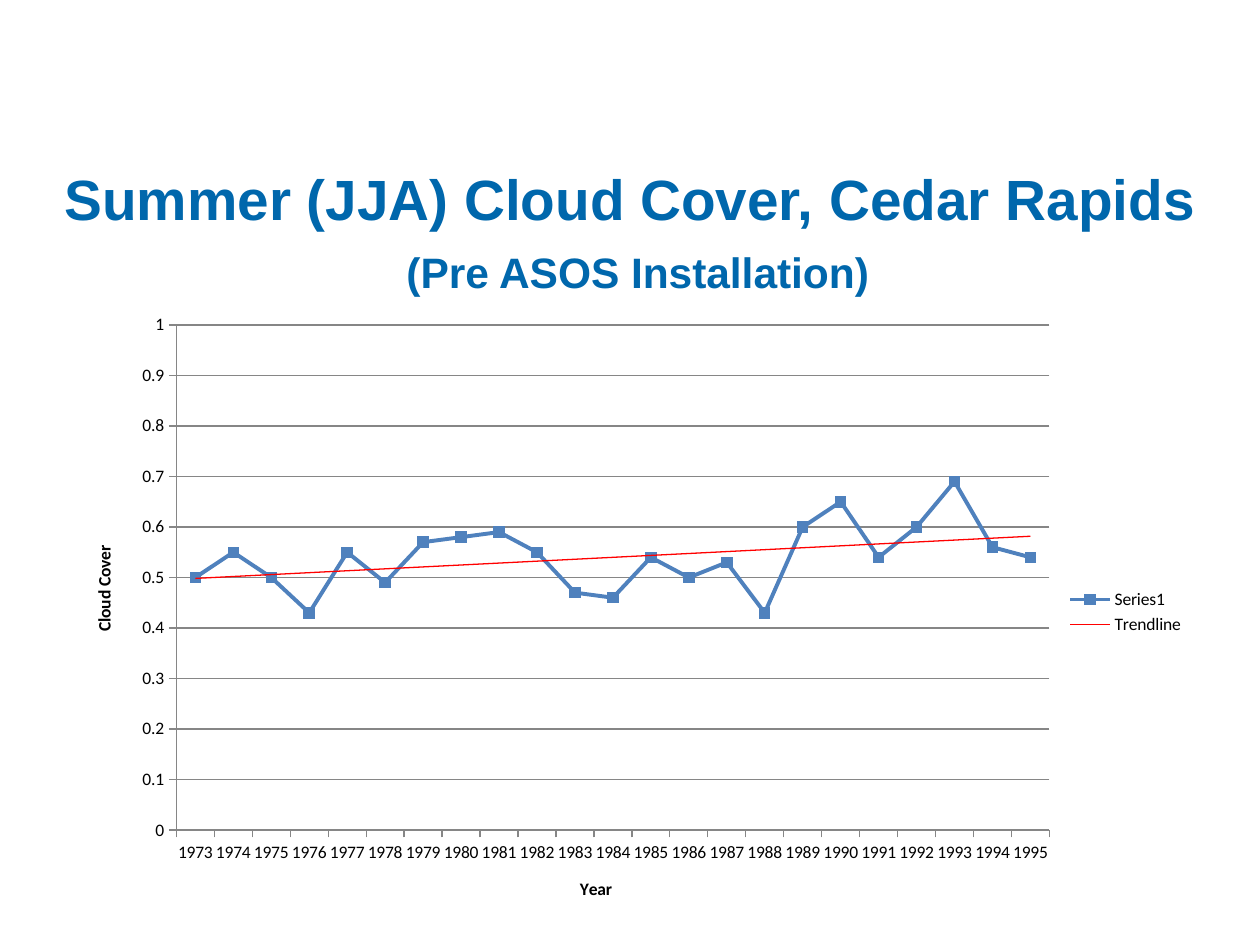
from dataclasses import dataclass
from typing import Any

import pptx
import pptx.chart.data
import pptx.dml.color
import pptx.enum.chart
import pptx.enum.text
import pptx.oxml
import pptx.oxml.ns
import pptx.util

Cm = pptx.util.Cm
Pt = pptx.util.Pt
RGBColor = pptx.dml.color.RGBColor

BLUE = RGBColor(0x00, 0x67, 0xAC)
STEEL = RGBColor(0x4F, 0x81, 0xBD)
GREY = RGBColor(0x86, 0x86, 0x86)
RED = RGBColor(0xFF, 0x00, 0x00)
BLACK = RGBColor(0x00, 0x00, 0x00)

YEARS = range(1973, 1996)
COVER = [0.5, 0.55, 0.5, 0.43, 0.55, 0.49, 0.57, 0.58, 0.59, 0.55, 0.47, 0.46,
         0.54, 0.5, 0.53, 0.43, 0.6, 0.65, 0.54, 0.6, 0.69, 0.56, 0.54]


@dataclass
class Axis:
    scale: Any
    title: str


def write(para: Any, text: str, *, size: float, font: str = "Arial",
          color: RGBColor = BLUE, bold: bool = True) -> None:
    run = para.add_run()
    run.text = text
    run.font.size = Pt(size)
    run.font.name = font
    run.font.bold = bold
    run.font.color.rgb = color


def stroke(line: Any, color: RGBColor, width: float) -> None:
    line.color.rgb = color
    line.width = Pt(width)


def draw_axis(axis: Axis) -> None:
    scale = axis.scale
    scale.major_tick_mark = pptx.enum.chart.XL_TICK_MARK.OUTSIDE
    scale.minor_tick_mark = pptx.enum.chart.XL_TICK_MARK.NONE
    stroke(scale.format.line, GREY, 0.75)
    para = scale.axis_title.text_frame.paragraphs[0]
    write(para, axis.title, size=10, font="Calibri", color=BLACK)


def add_trend(series: Any) -> None:
    ns = pptx.oxml.ns.nsdecls("c", "a")
    trend = pptx.oxml.parse_xml(
        f'<c:trendline {ns}><c:name>Trendline</c:name><c:spPr><a:ln w="{Pt(0.75)}">'
        f'<a:solidFill><a:srgbClr val="{RED}"/></a:solidFill></a:ln></c:spPr>'
        '<c:trendlineType val="linear"/><c:dispRSqr val="0"/>'
        '<c:dispEq val="0"/></c:trendline>')
    series._element.find(pptx.oxml.ns.qn("c:cat")).addprevious(trend)


def place_plot(chart: Any, **frame: float) -> None:
    area = chart._chartSpace.chart.plotArea
    for old in area.findall(pptx.oxml.ns.qn("c:layout")):
        area.remove(old)
    modes = '<c:xMode val="edge"/><c:yMode val="edge"/>'
    sides = "".join(f'<c:{key} val="{val}"/>' for key, val in frame.items())
    area.insert(0, pptx.oxml.parse_xml(
        f'<c:layout {pptx.oxml.ns.nsdecls("c")}><c:manualLayout>'
        f'<c:layoutTarget val="inner"/>{modes}{sides}</c:manualLayout></c:layout>'))


def draw_title(slide: Any) -> None:
    frame = slide.shapes.add_textbox(Cm(0), Cm(3.58), Cm(25.4), Cm(2.6)).text_frame
    frame.word_wrap = True
    frame.vertical_anchor = pptx.enum.text.MSO_ANCHOR.BOTTOM
    para = frame.paragraphs[0]
    para.alignment = pptx.enum.text.PP_ALIGN.CENTER
    write(para, "Summer (JJA) Cloud Cover, Cedar Rapids", size=32.4)
    para.add_line_break()
    write(para, " ", size=32.4)
    write(para, "(Pre ASOS Installation)", size=24.3)


def draw_chart(slide: Any) -> None:
    data = pptx.chart.data.CategoryChartData()
    data.categories = YEARS
    data.add_series("Series1", COVER)
    chart = slide.shapes.add_chart(
        pptx.enum.chart.XL_CHART_TYPE.LINE_MARKERS,
        Cm(1.27), Cm(6.05), Cm(22.86), Cm(12.57), data).chart
    chart.has_title = False
    chart.font.size = Pt(10)
    chart.font.name = "Calibri"
    chart.font.color.rgb = BLACK
    chart.has_legend = True
    chart.legend.position = pptx.enum.chart.XL_LEGEND_POSITION.RIGHT
    chart.legend.include_in_layout = False

    value = chart.value_axis
    value.minimum_scale, value.maximum_scale, value.major_unit = 0, 1, 0.1
    value.tick_labels.number_format = "General"
    value.tick_labels.number_format_is_linked = False
    stroke(value.major_gridlines.format.line, GREY, 0.75)
    for axis in (Axis(chart.category_axis, "Year"), Axis(value, "Cloud Cover")):
        draw_axis(axis)

    chart.plots[0].vary_by_categories = False
    series = chart.plots[0].series[0]
    series.smooth = False
    stroke(series.format.line, STEEL, 2.25)
    mark = series.marker
    mark.style = pptx.enum.chart.XL_MARKER_STYLE.SQUARE
    mark.size = 6
    mark.format.fill.solid()
    mark.format.fill.fore_color.rgb = STEEL
    stroke(mark.format.line, STEEL, 0.75)
    add_trend(series)
    place_plot(chart, x=0.1, y=0.04, w=0.77, h=0.81)


def main() -> None:
    deck = pptx.Presentation()
    deck.slide_width, deck.slide_height = Cm(25.4), Cm(19.05)
    slide = deck.slides.add_slide(deck.slide_layouts[6])
    draw_title(slide)
    draw_chart(slide)
    deck.save("out.pptx")


if __name__ == "__main__":
    main()
